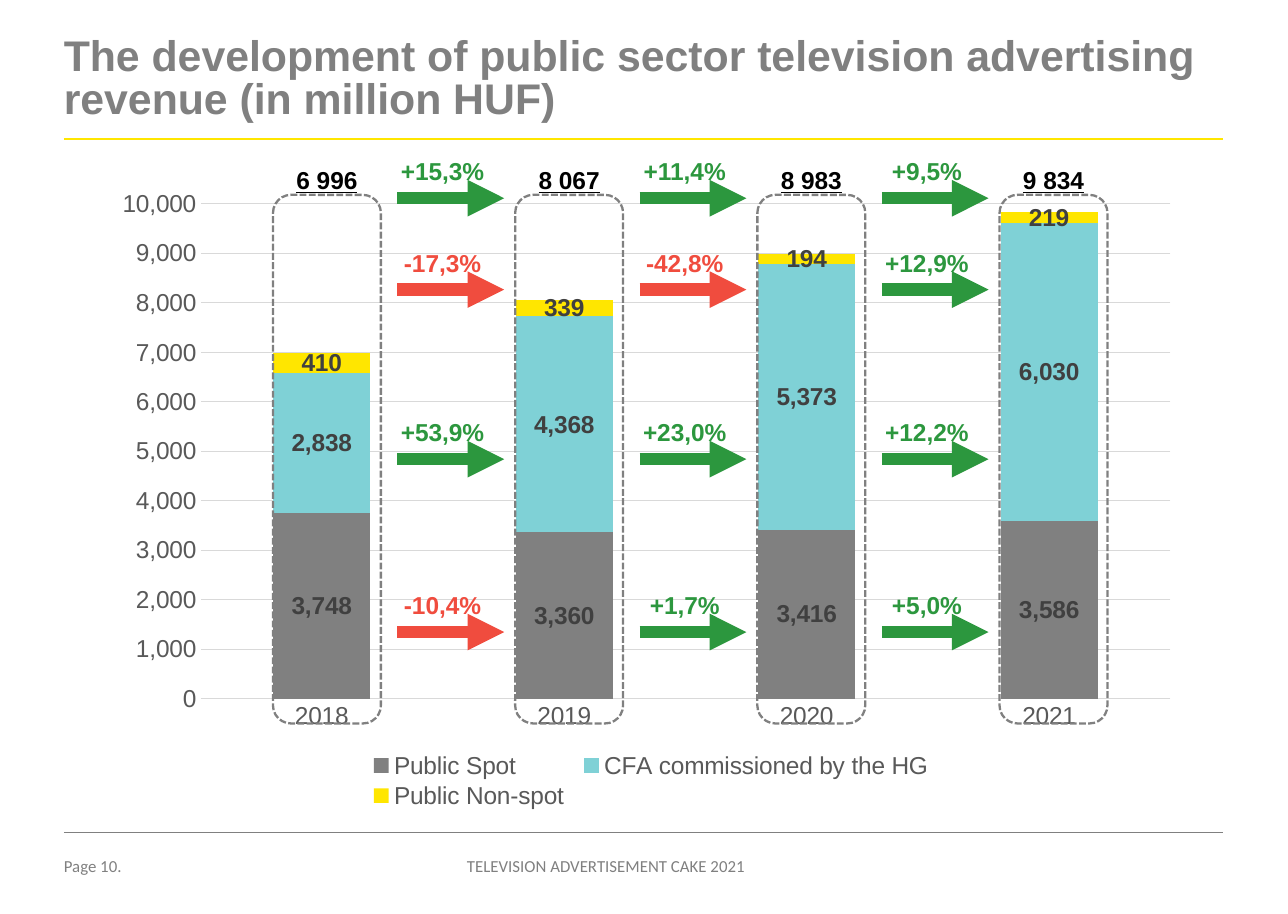
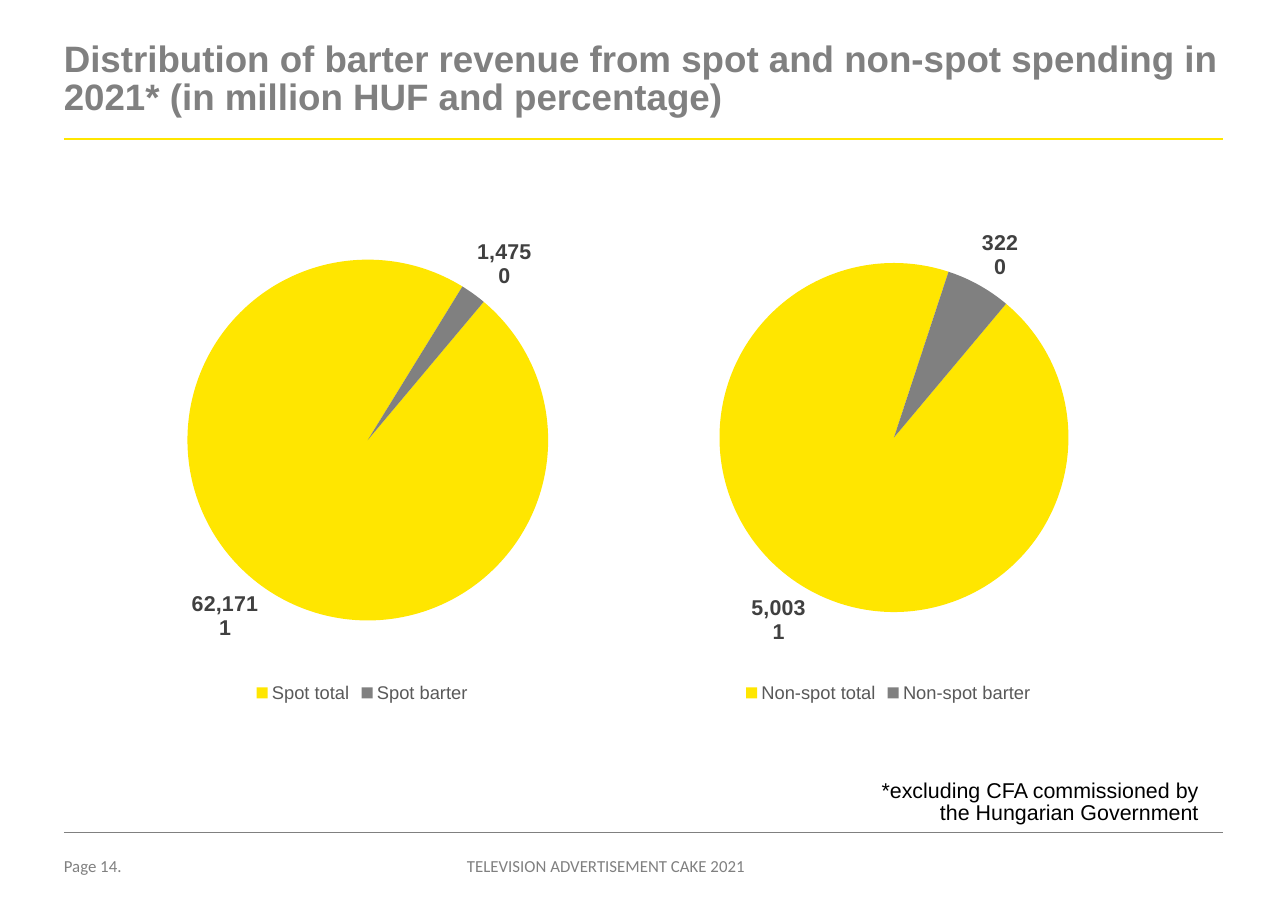
from dataclasses import dataclass
from pptx import Presentation
from pptx import util as u
from pptx.chart.data import CategoryChartData
from pptx.dml.color import RGBColor
from pptx.enum import chart as ec, dml, shapes, text
from pptx.oxml import parse_xml
from pptx.oxml.ns import nsdecls, qn


@dataclass(frozen=True)
class Theme:
    grey: str = "808080"
    yellow: str = "FFE600"
    teal: str = "7FD1D6"
    red: str = "F04C3E"
    green: str = "2C973E"
    black: str = "000000"
    axis: str = "595959"
    label: str = "404040"
    grid: str = "D9D9D9"
    sans: str = "Arial"
    foot: str = "Calibri"
    small: int = 11
    note: int = 14
    body: int = 16


T = Theme()
COLS, ROWS = 117, 83      # the slide as a grid of square cells
CELL = u.Inches(0.1)
LEFT, RIGHT = 5.8, 111.1  # content margins, in columns
PITCH = 22                # columns from one bar to the next
MID = text.PP_ALIGN.CENTER


def cells(*counts):
    return [u.Emu(round(n * CELL)) for n in counts]


def tint(hue):
    return RGBColor.from_string(hue)


def style(font, size, hue, bold=False, face=T.sans):
    font.size, font.bold, font.name = u.Pt(size), bold, face
    font.color.rgb = tint(hue)


def write(slide, box, words, size, hue, bold=False, face=T.sans,
          align=None, tight=False, top=0, under=False):
    """Put a text box on the grid; tight sets close line spacing."""
    frame = slide.shapes.add_textbox(*cells(*box)).text_frame
    frame.word_wrap = True
    frame.margin_left = frame.margin_right = frame.margin_bottom = 0
    frame.margin_top = cells(top)[0]
    para = frame.paragraphs[0]
    para.text = words
    para.alignment = align
    if tight:
        para.line_spacing = 0.85
    font = para.runs[0].font
    style(font, size, hue, bold, face)
    if under:
        font.underline = True


def rule(slide, start, end, hue, width, arrow=False):
    line = slide.shapes.add_connector(
        shapes.MSO_CONNECTOR.STRAIGHT, *cells(*start, *end))
    line.line.color.rgb = tint(hue)
    line.line.width = u.Pt(width)
    if arrow:
        line.line._get_or_add_ln().append(
            parse_xml(f'<a:tailEnd {nsdecls("a")} type="triangle"/>'))
    line._element.spPr.append(parse_xml(f'<a:effectLst {nsdecls("a")}/>'))


def page(deck, number, title, size, top):
    """Add a slide with the shared title, rules and footer."""
    slide = deck.slides.add_slide(deck.slide_layouts[6])
    write(slide, (LEFT, 77.7, 8.5, 2.4), f"Page {number}.",
          T.small, T.grey, face=T.foot)
    rule(slide, (LEFT, 12.6), (RIGHT, 12.6), T.yellow, 1.5)
    rule(slide, (LEFT, 75.6), (RIGHT, 75.6), T.grey, 0.25)
    write(slide, (LEFT, top, RIGHT - LEFT, 9.4), title, size, T.grey,
          bold=True, tight=True)
    write(slide, (33.1, 77.7, 43.9, 2.4), "TELEVISION ADVERTISEMENT CAKE 2021",
          T.small, T.grey, face=T.foot, align=MID)
    return slide


def locate(parent, index, area, inner=False):
    """Fix a chart part at an area given as shares of the chart."""
    for old in parent.findall(qn("c:layout")):
        parent.remove(old)
    target = '<c:layoutTarget val="inner"/>' if inner else ""
    modes = '<c:xMode val="edge"/><c:yMode val="edge"/>'
    sizes = "".join(f'<c:{k} val="{v}"/>' for k, v in zip("xywh", area))
    parent.insert(index, parse_xml(
        f'<c:layout {nsdecls("c")}><c:manualLayout>{target}{modes}{sizes}'
        '</c:manualLayout></c:layout>'))


def graph(slide, kind, box, cats, series, area, key):
    """Add a chart with its plot area and a bottom legend of size key."""
    data = CategoryChartData(number_format="#,##0")
    data.categories = cats
    for name, vals in series:
        data.add_series(name, vals)
    chart = slide.shapes.add_chart(kind, *cells(*box), data).chart
    chart.has_title = False
    style(chart.font, 10, T.black)
    chart.has_legend = True
    chart.legend.position = ec.XL_LEGEND_POSITION.BOTTOM
    chart.legend.include_in_layout = False
    style(chart.legend.font, key, T.axis)
    locate(chart.element.find(".//" + qn("c:plotArea")), 0, area, inner=True)
    return chart


def label(series, size, spot):
    tags = series.data_labels
    tags.show_value = True
    tags.number_format, tags.number_format_is_linked = "#,##0", False
    tags.position = spot
    style(tags.font, size, T.label, bold=True)
    return tags


def paint(part, hue):
    part.format.fill.solid()
    part.format.fill.fore_color.rgb = tint(hue)


def stack(slide):
    rows = (("Public Spot", (3748, 3360, 3416, 3586)),
            ("CFA commissioned by the HG", (2838, 4368, 5373, 6030)),
            ("Public Non-spot", (410, 339, 194, 219)))
    chart = graph(slide, ec.XL_CHART_TYPE.COLUMN_STACKED,
                  (9.1, 16.2, 99.1, 58), ("2018", "2019", "2020", "2021"),
                  rows, (0.092, 0.04, 0.889, 0.775), T.body)
    locate(chart.element.find(".//" + qn("c:legend")), 1,
           (0.24, 0.893, 0.53, 0.1))
    plot = chart.plots[0]
    plot.gap_width, plot.overlap = 150, 100
    plot.vary_by_categories = False
    for series, hue in zip(plot.series, (T.grey, T.teal, T.yellow)):
        paint(series, hue)
        label(series, T.body, ec.XL_LABEL_POSITION.CENTER)
    years, sums = chart.category_axis, chart.value_axis
    for axis in (years, sums):
        axis.major_tick_mark = axis.minor_tick_mark = ec.XL_TICK_MARK.NONE
        style(axis.tick_labels.font, T.body, T.axis)
    sums.minimum_scale, sums.maximum_scale, sums.major_unit = 0, 10000, 1000
    sums.tick_labels.number_format = "#,##0"
    sums.tick_labels.number_format_is_linked = False
    sums.format.line.fill.background()
    sums.has_major_gridlines = True
    for line in (years.format.line, sums.major_gridlines.format.line):
        line.color.rgb, line.width = tint(T.grid), u.Pt(0.75)


def total(slide, index, words):
    """Frame one bar and head it with its total."""
    left = 24.8 + index * PITCH
    ring = slide.shapes.add_shape(shapes.MSO_SHAPE.ROUNDED_RECTANGLE,
                                  *cells(left, 17.7, 9.8, 48))
    ring.shadow.inherit = False
    ring.fill.background()
    ring.line.color.rgb, ring.line.width = tint(T.grey), u.Pt(1.5)
    ring.line.dash_style = dml.MSO_LINE.SQUARE_DOT
    write(slide, (left + 0.6, 15, 8.6, 2.7), words, T.body, T.black,
          bold=True, align=MID, tight=True, top=0.4, under=True)


def change(slide, index, row, words):
    """Draw the arrow and growth rate between two bars."""
    hue = T.red if words.startswith("-") else T.green
    left = 36.1 + index * PITCH
    rule(slide, (left, row), (left + 9.7, row), hue, 8, arrow=True)
    write(slide, (left - 0.8, row - 4.3, 9.8, 3.6), words, T.body, hue,
          bold=True, align=MID, top=0.5)


def pie(slide, left, cats, vals, area):
    chart = graph(slide, ec.XL_CHART_TYPE.PIE, (left, 18.9, 51.2, 45.3),
                  cats, [("Series 1", vals)], area, 12)
    plot = chart.plots[0]
    plot.vary_by_categories = True
    series = plot.series[0]
    for index, hue in enumerate((T.yellow, T.grey)):
        paint(series.points[index], hue)
    tags = label(series, T.note, ec.XL_LABEL_POSITION.OUTSIDE_END)
    tags.show_percentage = True
    root = chart.element
    root.find(".//" + qn("c:ser")).find(".//" + qn("c:showBubbleSize")).addnext(
        parse_xml(f'<c:separator {nsdecls("c")}>\n</c:separator>'))
    root.find(".//" + qn("c:pieChart")).append(
        parse_xml(f'<c:firstSliceAng {nsdecls("c")} val="40"/>'))


def public(deck):
    slide = page(deck, 10, "The development of public sector television "
                 "advertising revenue (in million HUF)", 28, 3.3)
    stack(slide)
    for index, words in enumerate(("6 996", "8 067", "8 983", "9 834")):
        total(slide, index, words)
    rates = ((18, ("+15,3%", "+11,4%", "+9,5%")),
             (26.3, ("-17,3%", "-42,8%", "+12,9%")),
             (41.7, ("+53,9%", "+23,0%", "+12,2%")),
             (57.4, ("-10,4%", "+1,7%", "+5,0%")))
    for row, line in rates:
        for index, words in enumerate(line):
            change(slide, index, row, words)


def barter(deck):
    slide = page(deck, 14, "Distribution of barter revenue from spot and "
                 "non-spot spending in 2021* (in million HUF and percentage)",
                 24, 3.9)
    write(slide, (77.1, 70.5, 31.8, 4.4), "*excluding CFA commissioned by "
          "the Hungarian Government", T.note, T.black,
          align=text.PP_ALIGN.RIGHT, tight=True, top=0.4)
    pie(slide, 7.3, ("Spot total", "Spot barter"), (62171, 1475),
        (0.19, 0.1, 0.64, 0.73))
    pie(slide, 55.1, ("Non-spot total", "Non-spot barter"), (5003, 322),
        (0.2, 0.11, 0.62, 0.7))


def main():
    deck = Presentation()
    deck.slide_width, deck.slide_height = cells(COLS, ROWS)
    public(deck)
    barter(deck)
    deck.save("out.pptx")


if __name__ == "__main__":
    main()
